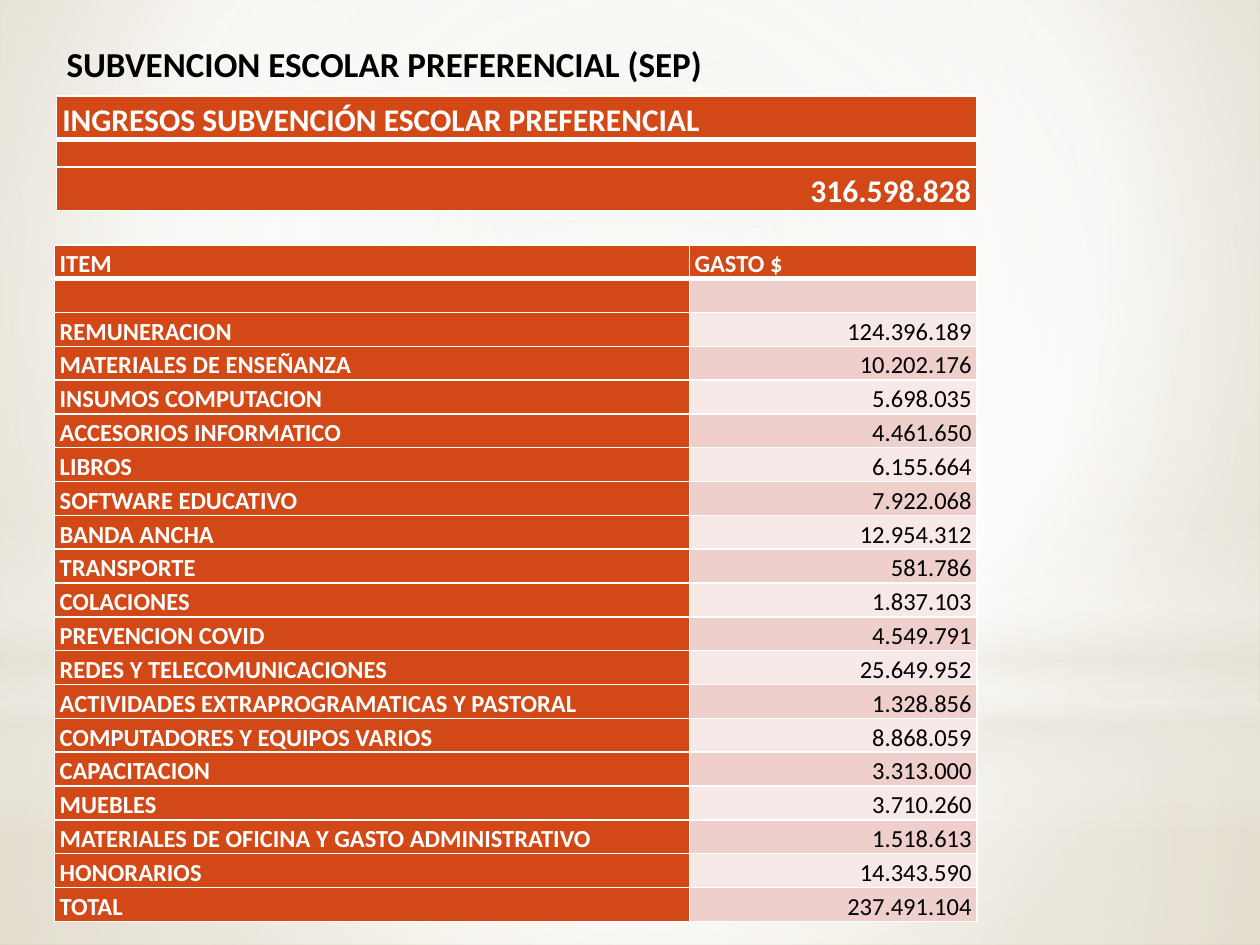
from lxml.etree import SubElement
from pptx import Presentation
from pptx.dml.color import RGBColor as RGB
from pptx.enum.shapes import MSO_SHAPE as SHAPE
from pptx.enum.text import MSO_ANCHOR as ANCHOR, PP_ALIGN as ALIGN
from pptx.oxml import parse_xml
from pptx.oxml.ns import nsdecls, qn
from pptx.util import Pt

C = {"orange": "D34817", "white": "FFFFFF", "black": "000000", "dark": "EFCFCC",
     "light": "F7E9E8", "sand": "E3DDCF", "tan": "CDBF9F", "cream": "E9E5DC"}
FONT = "Calibri"
EXPENSES = [
    ("REMUNERACION", "124.396.189"),
    ("MATERIALES DE ENSEÑANZA", "10.202.176"),
    ("INSUMOS COMPUTACION", "5.698.035"),
    ("ACCESORIOS INFORMATICO", "4.461.650"),
    ("LIBROS", "6.155.664"),
    ("SOFTWARE EDUCATIVO", "7.922.068"),
    ("BANDA ANCHA", "12.954.312"),
    ("TRANSPORTE", "581.786"),
    ("COLACIONES", "1.837.103"),
    ("PREVENCION COVID", "4.549.791"),
    ("REDES Y TELECOMUNICACIONES", "25.649.952"),
    ("ACTIVIDADES EXTRAPROGRAMATICAS Y PASTORAL", "1.328.856"),
    ("COMPUTADORES Y EQUIPOS VARIOS", "8.868.059"),
    ("CAPACITACION", "3.313.000"),
    ("MUEBLES", "3.710.260"),
    ("MATERIALES DE OFICINA Y GASTO ADMINISTRATIVO", "1.518.613"),
    ("HONORARIOS", "14.343.590"),
    ("TOTAL", "237.491.104"),
]


def set_gradient(fill, parent, stops, to=None):
    fill.solid()
    grad = parse_xml(f'<a:gradFill {nsdecls("a")} rotWithShape="1"><a:gsLst/></a:gradFill>')
    for pos, color, alpha in stops:
        gs = SubElement(grad[0], qn("a:gs"), pos=str(pos * 1000))
        clr = SubElement(gs, qn("a:srgbClr"), val=C[color])
        if alpha < 100:
            SubElement(clr, qn("a:alpha"), val=str(alpha * 1000))
    if to:
        path_fill = SubElement(grad, qn("a:path"), {"path": "circle"})
        SubElement(path_fill, qn("a:fillToRect"),
                   {side: str(v * 1000) for side, v in zip("ltrb", to)})
    else:
        SubElement(grad, qn("a:lin"), ang="5400000", scaled="0")
    parent.replace(parent.find(qn("a:solidFill")), grad)


def add_glow(s, kind, x, y, w, h, stops, to=None):
    sp = s.shapes.add_shape(kind, Pt(x), Pt(y), Pt(w), Pt(h))
    sp.shadow.inherit = False
    sp.line.fill.background()
    set_gradient(sp.fill, sp._element.spPr, stops, to)


def add_backdrop(s, w, h):
    fill = s.background.fill
    fill.solid()
    bg = s._element.find(".//" + qn("p:bgPr"))
    set_gradient(fill, bg, [(0, "sand", 100), (60, "white", 100), (100, "tan", 100)],
                 (20, 10, 20, 60))
    center = (50, 50, 50, 50)
    floor = 401.76
    add_glow(s, SHAPE.RECTANGLE, 0, floor, w, h - floor,
             [(0, "white", 91), (37, "white", 76), (100, "cream", 79)], center)
    add_glow(s, SHAPE.RECTANGLE, 0, 0, w, floor,
             [(0, "white", 89), (48, "white", 62), (100, "cream", 79)], center)
    add_glow(s, SHAPE.RECTANGLE, 0, 296.64, w, 180,
             [(0, "white", 0), (29, "white", 30), (45, "cream", 40),
              (55, "white", 26), (65, "cream", 60), (100, "white", 0)])
    add_glow(s, SHAPE.OVAL, 0, 126, w, floor,
             [(0, "white", 100), (56, "white", 0)], center)


def style_run(r, size, color, bold):
    r.font.name, r.font.size, r.font.bold = FONT, Pt(size), bold
    r.font.color.rgb = RGB.from_string(C[color])


def add_title(s, x, y, w, h):
    tf = s.shapes.add_textbox(Pt(x), Pt(y), Pt(w), Pt(h)).text_frame
    tf.word_wrap = True
    tf.text = "SUBVENCION ESCOLAR PREFERENCIAL (SEP)"
    style_run(tf.paragraphs[0].runs[0], 20, "black", True)


def set_borders(cell, **widths):
    tc_pr = cell._tc.get_or_add_tcPr()
    for i, side in enumerate("LRTB"):
        ln = parse_xml(f'<a:ln{side} {nsdecls("a")} w="{Pt(widths.get(side, 1))}"><a:solidFill>'
                       f'<a:srgbClr val="{C["white"]}"/></a:solidFill></a:ln{side}>')
        tc_pr.insert(i, ln)


def fill_cell(cell, text, size, fill, color, bold, align, inset):
    cell.fill.solid()
    cell.fill.fore_color.rgb = RGB.from_string(C[fill])
    cell.vertical_anchor = ANCHOR.BOTTOM
    cell.margin_left = cell.margin_right = Pt(inset)
    cell.margin_top = cell.margin_bottom = 0
    p = cell.text_frame.paragraphs[0]
    if text:
        p.text = text
        p.alignment, p.line_spacing = align, 1.15
        style_run(p.runs[0], size, color, bold)
    else:
        SubElement(p._p, qn("a:endParaRPr"), sz="1000")


def add_grid(s, x, y, widths, heights, rows, size, inset, style):
    frame = s.shapes.add_table(len(heights), len(widths), Pt(x), Pt(y),
                               Pt(sum(widths)), Pt(sum(heights)))
    table = frame.table
    table.horz_banding = False
    for col, w in zip(table.columns, widths):
        col.width = Pt(w)
    for i, (row, h) in enumerate(zip(table.rows, heights)):
        row.height = Pt(h)
        for j, cell in enumerate(row.cells):
            fill_cell(cell, rows[i][j], size, *style(i, j), inset)
            set_borders(cell, T=3 if i == 1 else 1, B=3 if i == 0 else 1)


def income_style(i, j):
    return "orange", "white", True, ALIGN.RIGHT if i == 2 else ALIGN.LEFT


def expense_style(i, j):
    if i == 0 or j == 0:
        return "orange", "white", True, ALIGN.LEFT
    return "dark" if i % 2 else "light", "black", False, ALIGN.RIGHT


def add_income(s, x, y, w):
    rows = [("INGRESOS SUBVENCIÓN ESCOLAR PREFERENCIAL",), ("",), ("316.598.828",)]
    add_grid(s, x, y, [w], [24.8, 15.6, 24.8], rows, 18, 3.4, income_style)


def add_expenses(s, x, y, w, h):
    rows = [("ITEM", "GASTO $"), ("", ""), *EXPENSES]
    item_w = 362.8
    add_grid(s, x, y, [item_w, w - item_w], [h / len(rows)] * len(rows),
             rows, 14, 2.9, expense_style)


def main():
    prs = Presentation()
    prs.slide_width, prs.slide_height = Pt(720), Pt(540)
    s = prs.slides.add_slide(prs.slide_layouts[6])
    add_backdrop(s, 720, 540)
    add_title(s, 31, 21, 509, 53)
    add_income(s, 32.2, 54.9, 526)
    add_expenses(s, 31.2, 139.9, 527, 386.6)
    prs.save("out.pptx")


if __name__ == "__main__":
    main()
